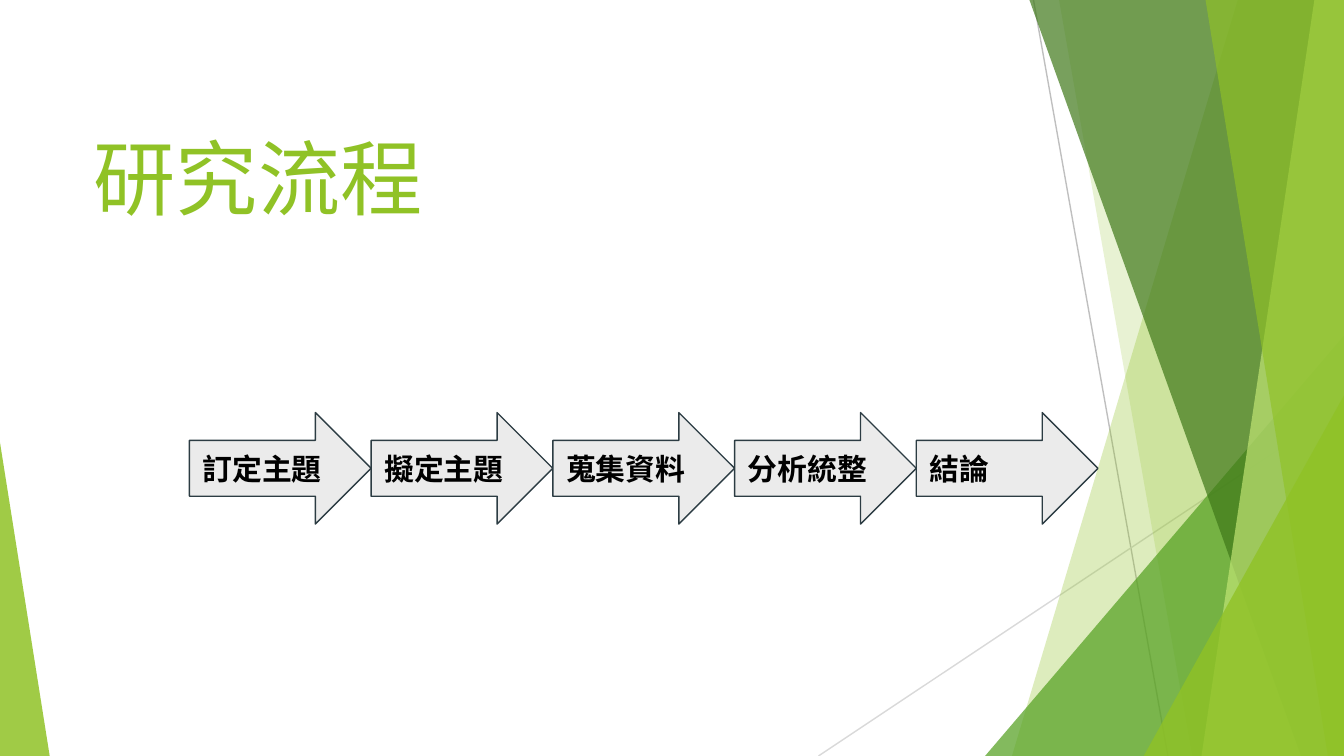
from lxml.etree import SubElement
from pptx import Presentation
from pptx.dml.color import RGBColor
from pptx.enum.shapes import MSO_CONNECTOR, MSO_SHAPE
from pptx.enum.text import MSO_ANCHOR, PP_ALIGN
from pptx.oxml.ns import qn
from pptx.util import Inches, Pt

WIDE, HIGH = Inches(10), Inches(5.625)
GREEN, LEAF = "90C226", "54A021"
STEPS = ["訂定主題", "擬定主題", "蒐集資料", "分析統整", "結論"]


def color(text):
    return RGBColor.from_string(text)


def paint(shape, fill, alpha=100):
    """Fill a shape, with alpha in percent, and drop its line and shadow."""
    shape.shadow.inherit = False
    shape.line.fill.background()
    shape.fill.solid()
    shape.fill.fore_color.rgb = color(fill)
    if alpha < 100:
        tone = shape._element.spPr.find(qn("a:solidFill"))[0]
        SubElement(tone, qn("a:alpha"), val=str(alpha * 1000))


def stroke(shape, tint):
    shape.line.color.rgb = color(tint)
    shape.line.width = Pt(0.75)


def style(frame, font, size, tint, bold=False):
    """Set the insets and the look of a one-line text."""
    frame.word_wrap = True
    frame.margin_left = frame.margin_right = Inches(0.1)
    frame.margin_top = frame.margin_bottom = Inches(0.1)
    line = frame.paragraphs[0]
    line.alignment = PP_ALIGN.LEFT
    face = line.runs[0].font
    face.name, face.size, face.bold = font, Pt(size), bold
    face.color.rgb = color(tint)


def add_ray(slide, start, end, tint):
    points = [int(n) for n in (*start, *end)]
    ray = slide.shapes.add_connector(MSO_CONNECTOR.STRAIGHT, *points)
    stroke(ray, tint)
    SubElement(ray._element.spPr, qn("a:effectLst"))


def add_band(slide, box, top, base, fill, alpha):
    """Fill from a slanted left edge (top to base, shares of width) to the right."""
    left, head, width, height = box
    right, foot = left + width, head + height
    pen = slide.shapes.build_freeform(int(left + top * width), head)
    pen.add_line_segments(
        [(right, head), (right, foot), (int(left + base * width), foot)])
    paint(pen.convert_to_shape(), fill, alpha)


def add_peak(slide, box, left, top, right, apex, fill, alpha):
    """Stand a triangle on the foot of the box; left, top, right are shares."""
    x, y, width, height = box
    peak = slide.shapes.add_shape(
        MSO_SHAPE.ISOSCELES_TRIANGLE, int(x + left * width), int(y + top * height),
        int((right - left) * width), int((1 - top) * height))
    peak.adjustments[0] = apex
    paint(peak, fill, alpha)


def add_facets(slide, box):
    left, top, width, height = box
    right, foot = left + width, top + height
    add_ray(slide, (left + 0.769 * width, top), (left + 0.869 * width, foot), "BFBFBF")
    add_ray(slide, (right, top + 0.537 * height), (left + 0.609 * width, foot), "D9D9D9")
    add_band(slide, box, 0.921, 0.753, GREEN, 30)
    add_band(slide, box, 0.788, 0.887, GREEN, 20)
    add_peak(slide, box, 0.733, 0.444, 1, 1, LEAF, 72)
    add_band(slide, box, 0.766, 0.968, "3F7819", 70)
    add_band(slide, box, 0.978, 0.894, "C0E474", 70)
    add_band(slide, box, 0.897, 0.988, GREEN, 65)
    add_peak(slide, box, 0.851, 0.523, 1, 1, GREEN, 80)
    add_peak(slide, box, 0, 0.585, 0.037, 0, GREEN, 85)


def add_title(slide, box, text):
    frame = slide.shapes.add_textbox(*box).text_frame
    frame.text = text
    frame.paragraphs[0].line_spacing = 1.15
    style(frame, "Lato", 44, GREEN)


def add_flow(slide, box, steps):
    left, top, width, height = box
    pitch = width / len(steps)
    for col, step in enumerate(steps):
        arrow = slide.shapes.add_shape(
            MSO_SHAPE.RIGHT_ARROW, int(left + col * pitch), top, int(pitch), height)
        paint(arrow, "EBEBEB")
        stroke(arrow, "2C3C43")
        frame = arrow.text_frame
        frame.text = step
        frame.vertical_anchor = MSO_ANCHOR.MIDDLE
        style(frame, "Arial", 16, "000000", True)


def main():
    deck = Presentation()
    deck.slide_width, deck.slide_height = WIDE, HIGH
    slide = deck.slides.add_slide(deck.slide_layouts[6])
    add_facets(slide, (0, 0, WIDE, HIGH))
    add_title(slide, (Inches(0.6), Inches(0.74), Inches(8.41), Inches(0.59)), "研究流程")
    add_flow(slide, (Inches(1.41), Inches(3.07), Inches(6.76), Inches(0.83)), STEPS)
    deck.save("out.pptx")


if __name__ == "__main__":
    main()
